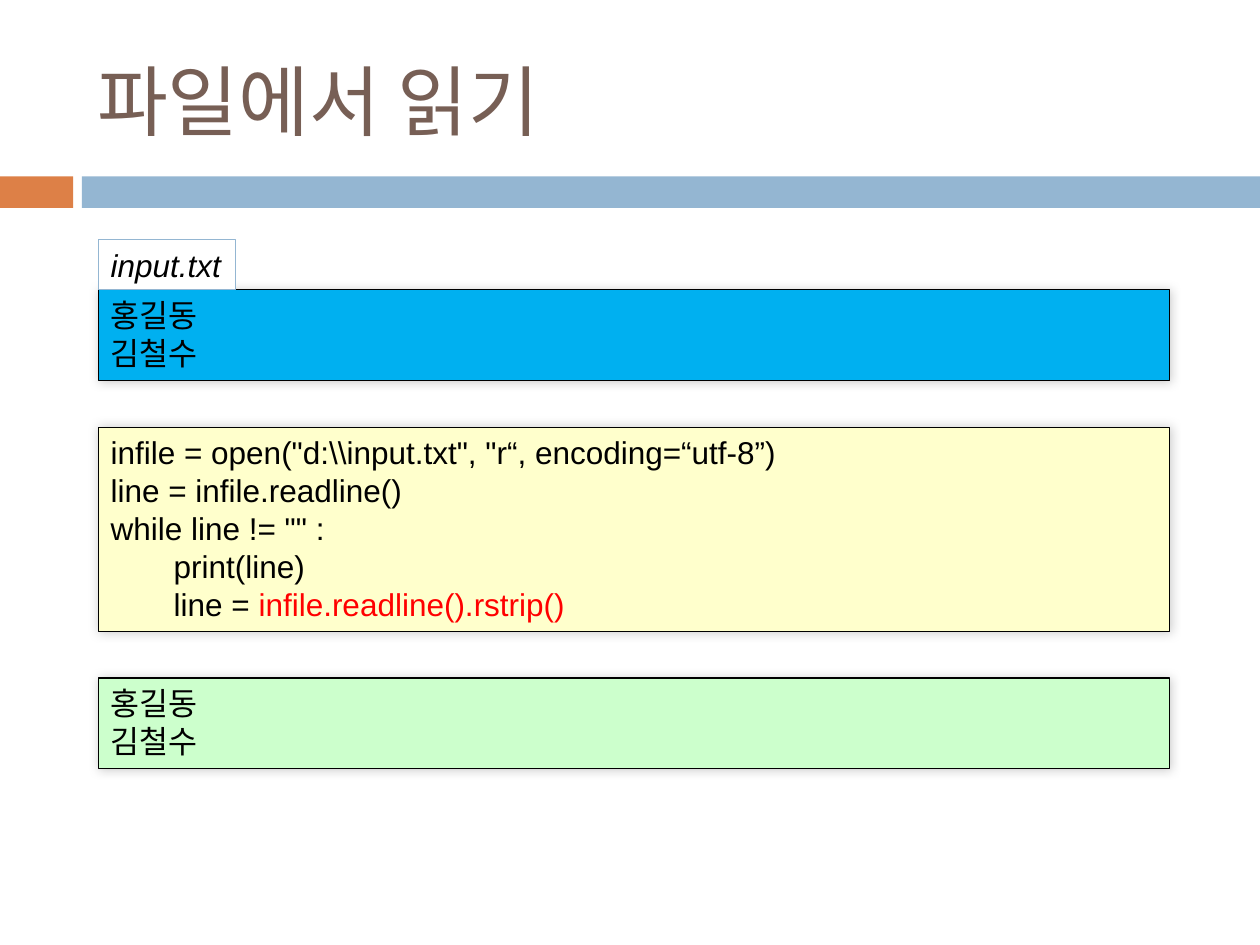
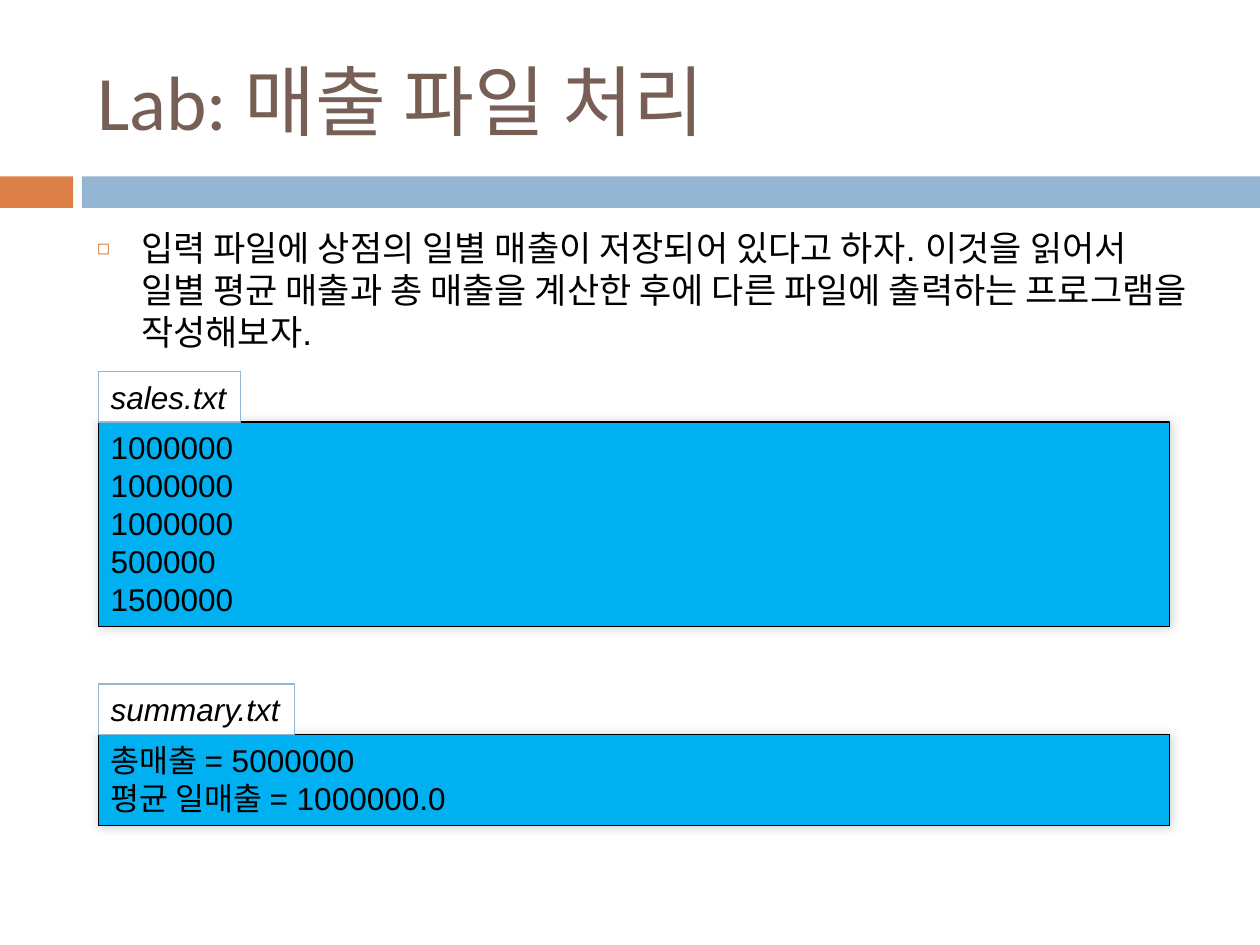
from lxml.etree import SubElement as Sub
from pptx import Presentation
from pptx.dml.color import RGBColor
from pptx.enum.shapes import MSO_SHAPE
from pptx.enum.text import MSO_ANCHOR, MSO_AUTO_SIZE, PP_ALIGN
from pptx.oxml.ns import qn
from pptx.util import Inches, Pt

BLUE, ORANGE, BROWN = "94B6D2", "DD8047", "775F55"
BLACK, WHITE, RED = "000000", "FFFFFF", "FF0000"
SKY, CREAM, MINT = "00B0F0", "FFFFCC", "CCFFCC"
LEFT, WIDE = 0.78, 8.5
TAB_H = 0.4


def color(code):
    return RGBColor.from_string(code)


def style(para, size, code, face="Arial", italic=False):
    para.alignment = PP_ALIGN.LEFT
    font = para.font
    font.name, font.size, font.italic = face, Pt(size), italic
    font.color.rgb = color(code)


def rect(slide, box, fill, line=None):
    """Add a flat rectangle; box is left, top, width, height in inches."""
    shape = slide.shapes.add_shape(MSO_SHAPE.RECTANGLE, *map(Inches, box))
    shape.shadow.inherit = False
    shape.fill.solid()
    shape.fill.fore_color.rgb = color(fill)
    if line:
        shape.line.color.rgb = color(line)
        shape.line.width = Pt(0.75)
    else:
        shape.line.fill.background()
    return shape


def write(shape, text, wrap=True, italic=False):
    frame = shape.text_frame
    frame.text = text
    frame.word_wrap = wrap
    frame.auto_size = MSO_AUTO_SIZE.SHAPE_TO_FIT_TEXT
    frame.vertical_anchor = MSO_ANCHOR.TOP
    for para in frame.paragraphs:
        style(para, 18, BLACK, italic=italic)


def glow(shape):
    """Give a shape a soft shadow on all sides."""
    effects = shape.element.spPr.find(qn("a:effectLst"))
    outer = Sub(effects, qn("a:outerShdw"), blurRad=str(Pt(6)), dist="0", dir="18900000")
    black = Sub(outer, qn("a:srgbClr"), val=BLACK)
    Sub(black, qn("a:alpha"), val="20000")


def panel(slide, top, fill, lines):
    height = 0.12 + 0.3 * len(lines)
    shape = rect(slide, (LEFT, top, WIDE, height), fill, BLACK)
    glow(shape)
    write(shape, "\n".join(lines))
    return shape


def file_panel(slide, top, name, width, lines):
    """Add a sky panel with a file name tab standing on its top edge."""
    panel(slide, top, SKY, lines)
    tab = rect(slide, (LEFT, top - TAB_H, width, TAB_H), WHITE, BLUE)
    write(tab, name, wrap=False, italic=True)


def place(holder, box, text):
    holder.left, holder.top, holder.width, holder.height = map(Inches, box)
    frame = holder.text_frame
    frame.text = text
    frame.word_wrap = True
    frame.auto_size = MSO_AUTO_SIZE.NONE
    return frame


def start(prs, layout, title):
    slide = prs.slides.add_slide(prs.slide_layouts[layout])
    frame = place(slide.shapes.title, (0.67, 0.25, 8.92, 1.08), title)
    frame.vertical_anchor = MSO_ANCHOR.MIDDLE
    style(frame.paragraphs[0], 44, BROWN, "Calibri")
    return slide


def bands(prs, slide):
    """Draw the two bands and move them to the master for every slide."""
    tree = prs.slide_master.shapes.element
    for left, width, fill in ((0, 0.58, ORANGE), (0.65, 9.35, BLUE)):
        tree.append(rect(slide, (left, 1.4, width, 0.25), fill).element)


def bullet(slide, text):
    frame = place(slide.placeholders[1], (0.67, 1.75, 8.92, 4.92), text)
    para = frame.paragraphs[0]
    para.space_before = Pt(7)
    props = para._p.get_or_add_pPr()
    props.set("marL", str(Inches(0.35)))
    props.set("indent", str(-Inches(0.35)))
    Sub(Sub(props, qn("a:buClr")), qn("a:srgbClr"), val=ORANGE)
    Sub(props, qn("a:buSzPct"), val="60000")
    Sub(props, qn("a:buFont"), typeface="Arial")
    Sub(props, qn("a:buChar"), char="◻")
    style(para, 20, BLACK)


def reading(prs):
    slide = start(prs, 5, "파일에서 읽기")
    bands(prs, slide)
    names = ["홍길동", "김철수"]
    code = panel(slide, 3.39, CREAM, [
        'infile = open("d:\\\\input.txt", "r“, encoding=“utf-8”)',
        "line = infile.readline()",
        'while line != "" :',
        "\tprint(line)",
        "\tline = ",
    ])
    call = code.text_frame.paragraphs[-1].add_run()
    call.text = "infile.readline().rstrip()"
    call.font.color.rgb = color(RED)
    panel(slide, 5.38, MINT, names)
    file_panel(slide, 2.3, "input.txt", 1.09, names)


def sales(prs):
    slide = start(prs, 1, "Lab: 매출 파일 처리")
    bullet(slide, "입력 파일에 상점의 일별 매출이 저장되어 있다고 하자. 이것을 읽어서 "
                  "일별 평균 매출과 총 매출을 계산한 후에 다른 파일에 출력하는 "
                  "프로그램을 작성해보자.")
    days = ["1000000"] * 3 + ["500000", "1500000"]
    file_panel(slide, 3.35, "sales.txt", 1.13, days)
    file_panel(slide, 5.83, "summary.txt", 1.56,
               ["총매출 = 5000000", "평균 일매출 = 1000000.0"])


def main():
    prs = Presentation()
    prs.slide_width, prs.slide_height = Inches(10), Inches(7.5)
    reading(prs)
    sales(prs)
    prs.save("out.pptx")


if __name__ == "__main__":
    main()
